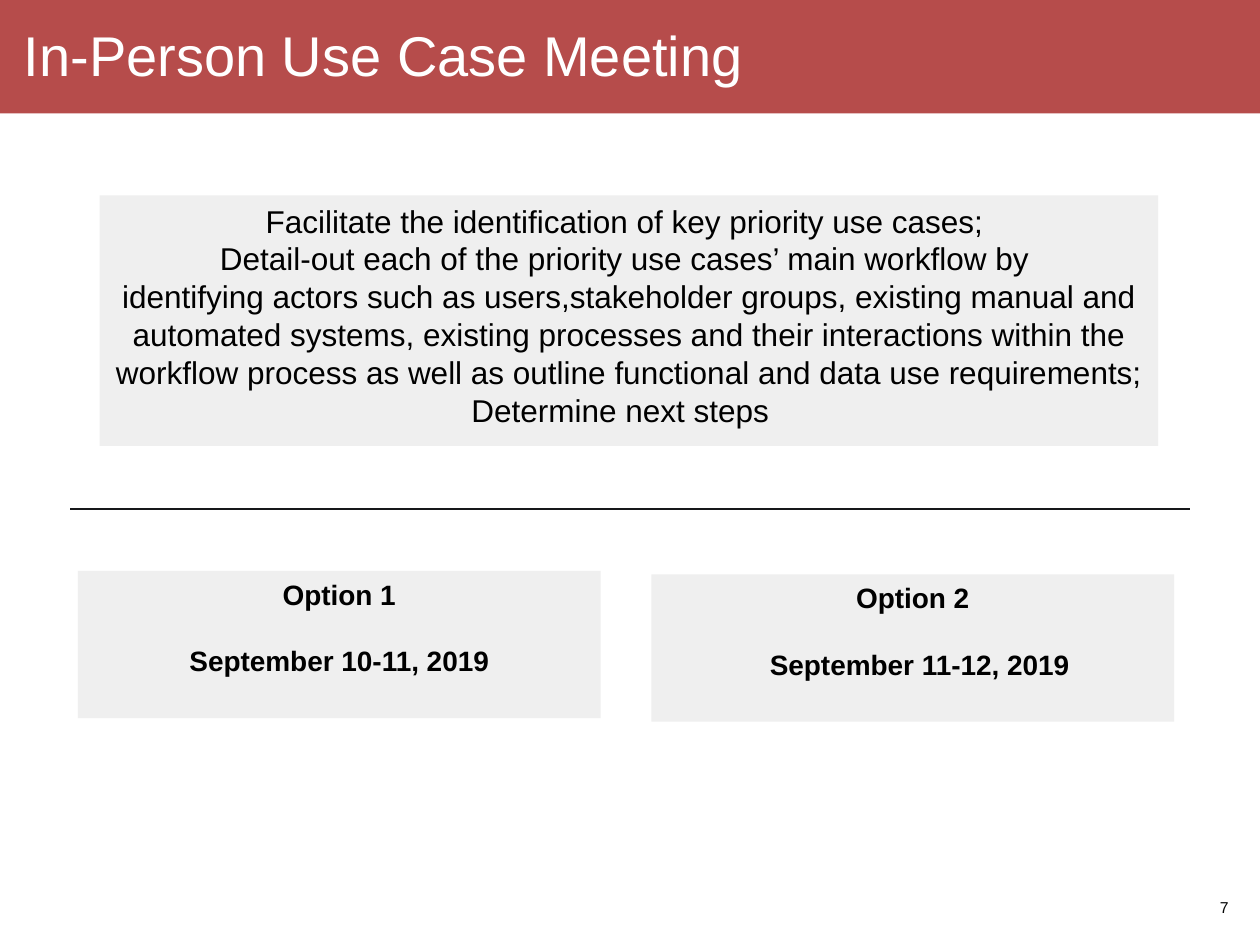
"""Build the use case meeting slide."""
from pptx import Presentation
from pptx import util as u
from pptx.dml.color import RGBColor
from pptx.enum import shapes, text
from pptx.oxml.ns import qn
from lxml import etree

HUES = {"bar": "B64C4B", "box": "EFEFEF", "rule": "16181A",
        "ink": "000000", "page": "050606", "head": "FFFFFF"}
GOALS = [
    "Facilitate the identification of key priority use cases; \v"
    "Detail-out each of the priority use cases’ main workflow by ",
    "identifying actors such as users,stakeholder groups, existing manual and "
    "automated systems, existing processes and their interactions within the "
    "workflow process as well as outline functional and data use requirements;",
    "Determine next steps  ",
]
DATES = [("Option 1", "September 10-11, 2019", 1.57, 11.51, 0, 0),
         ("Option 2", "September 11-12, 2019", 13.13, 11.58, 1.27, -0.99)]


class Deck:
    """Hold the style and the current slide."""

    def __init__(self, slide, font="Arial"):
        self.slide = slide
        self.font = font

    def hue(self, name):
        return RGBColor.from_string(HUES[name])

    def fill(self, shape, lines, size, hue="ink", bold=False,
             align=text.PP_ALIGN.CENTER):
        frame = shape.text_frame
        frame.word_wrap = True
        frame.text = "\n".join(lines)
        for para in frame.paragraphs:
            para.alignment = align
            for run in para.runs:
                run.font.name = self.font
                run.font.size = u.Pt(size)
                run.font.bold = bold
                run.font.color.rgb = self.hue(hue)
        return frame

    def box(self, left, top, width, height, hue="box"):
        shape = self.slide.shapes.add_shape(
            shapes.MSO_SHAPE.RECTANGLE, *map(u.Cm, (left, top, width, height)))
        shape.shadow.inherit = False
        shape.fill.solid()
        shape.fill.fore_color.rgb = self.hue(hue)
        shape.line.fill.background()
        shape.text_frame.vertical_anchor = text.MSO_ANCHOR.TOP
        return shape

    def label(self, left, top, width, height, line, **style):
        shape = self.slide.shapes.add_textbox(
            *map(u.Cm, (left, top, width, height)))
        return self.fill(shape, [line], **style)

    def rule(self, left, right, top):
        line = self.slide.shapes.add_connector(
            shapes.MSO_CONNECTOR.STRAIGHT, *map(u.Cm, (right, top, left, top)))
        line.line.color.rgb = self.hue("rule")
        line.line.width = u.Pt(1)
        etree.SubElement(line._element.spPr, qn("a:effectLst"))


def main():
    show = Presentation()
    show.slide_width, show.slide_height = u.Cm(25.4), u.Cm(19.05)
    deck = Deck(show.slides.add_slide(show.slide_layouts[6]))

    deck.box(0, 0, 25.4, 2.29, "bar")
    page = deck.label(23.8, 17.78, 1.22, 1.02, "7", size=9, hue="page",
                      align=text.PP_ALIGN.RIGHT)
    page.vertical_anchor = text.MSO_ANCHOR.MIDDLE
    head = deck.label(0.48, 0.56, 24.36, 1.27, "In-Person Use Case Meeting",
                      size=32, hue="head", align=text.PP_ALIGN.LEFT)
    head.margin_left = head.margin_right = 0
    head.margin_top = head.margin_bottom = 0
    head.paragraphs[0].line_spacing = 0.9

    for name, date, left, top, indent, first in DATES:
        frame = deck.fill(deck.box(left, top, 10.54, 2.97), [name, date],
                          16, bold=True)
        day = frame.paragraphs[1]
        day.space_before = u.Pt(19)
        props = day._p.get_or_add_pPr()
        props.set("marL", str(u.Cm(indent)))
        props.set("indent", str(u.Cm(first)))

    deck.rule(1.42, 23.98, 10.26)
    deck.fill(deck.box(2.01, 3.94, 21.34, 5.05), GOALS, 18)
    show.save("out.pptx")


if __name__ == "__main__":
    main()
